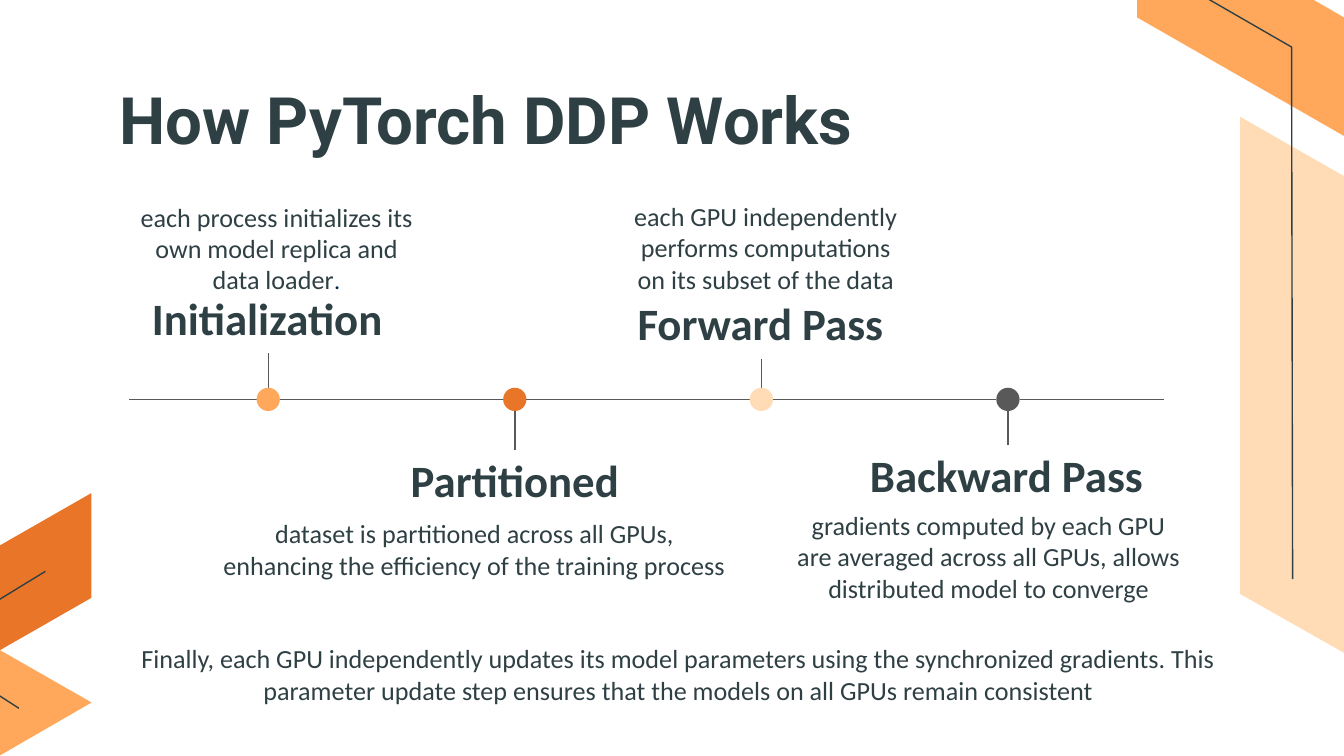
from lxml import etree
from pptx import Presentation
from pptx.dml.color import RGBColor
from pptx.enum import shapes, text
from pptx.oxml import ns
from pptx.util import Cm, Pt

INK = RGBColor(0x2F, 0x40, 0x44)
NAVY = RGBColor(0x00, 0x26, 0x3E)
GRAY = RGBColor(0x59, 0x59, 0x59)
PEACH = RGBColor(0xFF, 0xDC, 0xB6)
ORANGE = RGBColor(0xFF, 0xA8, 0x5C)
BURNT = RGBColor(0xE9, 0x75, 0x29)

deck = Presentation()
deck.slide_width, deck.slide_height = Cm(25.4), Cm(14.29)
slide = deck.slides.add_slide(deck.slide_layouts[6])


def write(words, left, top, width, height, size, bold=False, font="Calibri",
          align=text.PP_ALIGN.CENTER, anchor=text.MSO_ANCHOR.MIDDLE, inset=0.25):
    frame = slide.shapes.add_textbox(
        Cm(left), Cm(top), Cm(width), Cm(height)).text_frame
    frame.word_wrap = True
    frame.vertical_anchor = anchor
    frame.margin_top = Cm(inset)
    frame.margin_left = frame.margin_right = frame.margin_bottom = Cm(0.25)
    paragraph = frame.paragraphs[0]
    paragraph.text = words
    paragraph.alignment = align
    paragraph.font.name, paragraph.font.size = font, Pt(size)
    paragraph.font.bold, paragraph.font.color.rgb = bold, INK
    return paragraph


def rule(x1, y1, x2, y2):
    line = slide.shapes.add_connector(
        shapes.MSO_CONNECTOR.STRAIGHT, Cm(x1), Cm(y1), Cm(x2), Cm(y2))
    line.line.color.rgb, line.line.width = GRAY, Pt(0.75)
    etree.SubElement(line._element.spPr, ns.qn("a:effectLst"))


# Corner decoration: filled bands, and thin outlines where there is no fill
decoration = [
    (PEACH, [(25.4, 12.34), (25.4, 3.33), (23.44, 2.21), (23.44, 11.23)]),
    (ORANGE, [(25.4, 0.33), (25.4, 2.57), (21.49, 0.33), (21.49, -1.93)]),
    (None, [(24.43, 10.95), (24.41, 0.89), (20.35, -1.45)]),
    (BURNT, [(0, 10.31), (1.73, 9.32), (1.73, 11.3), (0, 12.29)]),
    (ORANGE, [(0, 14.28), (-1.73, 13.28), (0, 12.29), (1.73, 13.28)]),
    (None, [(0.36, 13.39), (-0.71, 12.7), (-0.71, 11.76), (0.86, 10.8)]),
]
for color, corners in decoration:
    start, *rest = [(Cm(x), Cm(y)) for x, y in corners]
    outline = slide.shapes.build_freeform(*start)
    outline.add_line_segments(rest, close=color is not None)
    band = outline.convert_to_shape()
    band.shadow.inherit = False
    if color is None:
        band.fill.background()
        band.line.color.rgb, band.line.width = INK, Pt(0.75)
    else:
        band.fill.solid()
        band.fill.fore_color.rgb = color
        band.line.fill.background()

# Title
write("How PyTorch DDP Works", 2.01, 1.5, 21.41, 1.45, 35, True, "Roboto",
      text.PP_ALIGN.LEFT, text.MSO_ANCHOR.TOP, 0)

# Steps: colour, stem end, heading, heading position, description and its box
steps = [
    (ORANGE, 6.68, "Initialization", (2.08, 5.56),
     "each process initializes its own model replica and data loader",
     (2.26, 3.89, 5.94, 1.6)),
    (BURNT, 8.51, "Partitioned", (6.76, 8.51),
     "dataset is partitioned across all GPUs, "
     "enhancing the efficiency of the training process",
     (3.89, 9.58, 10.16, 1.6)),
    (PEACH, 6.78, "Forward Pass", (11.4, 5.66),
     "each GPU independently performs computations on its subset of the data",
     (11.58, 4.04, 5.79, 1.27)),
    (GRAY, 8.41, "Backward Pass", (16.05, 8.41),
     "gradients computed by each GPU are averaged across all GPUs, "
     "allows distributed model to converge",
     (14.76, 9.58, 7.85, 1.88)),
]
AXIS_Y, AXIS_START, AXIS_END = 7.55, 2.44, 22
FIRST_DOT, DOT_GAP, RADIUS = 5.07, 4.66, 0.22

segment_start = AXIS_START
for i, (color, stem_end, heading, place, description, box) in enumerate(steps):
    x = FIRST_DOT + i * DOT_GAP
    above = stem_end < AXIS_Y
    write(heading, *place, 5.94, 1.12, 24, True, inset=0 if above else 0.25)
    detail = write(description, *box, 14)
    if i == 0:
        stop = detail.add_run()
        stop.text = "."
        stop.font.name, stop.font.color.rgb = "Roboto", NAVY

    # Stem, axis segment up to the dot, then the dot
    rule(x, AXIS_Y + (-RADIUS if above else RADIUS), x, stem_end)
    rule(segment_start, AXIS_Y, x - RADIUS, AXIS_Y)
    segment_start = x + RADIUS
    dot = slide.shapes.add_shape(
        shapes.MSO_SHAPE.OVAL, Cm(x - RADIUS), Cm(AXIS_Y - RADIUS),
        Cm(2 * RADIUS), Cm(2 * RADIUS))
    dot.shadow.inherit = False
    dot.fill.solid()
    dot.fill.fore_color.rgb = color
    dot.line.fill.background()
rule(segment_start, AXIS_Y, AXIS_END, AXIS_Y)

# Closing remark
write("Finally, each GPU independently updates its model parameters using the "
      "synchronized gradients. This parameter update step ensures that the "
      "models on all GPUs remain consistent", 2.26, 11.94, 21.13, 1.6, 14)

deck.save("out.pptx")
